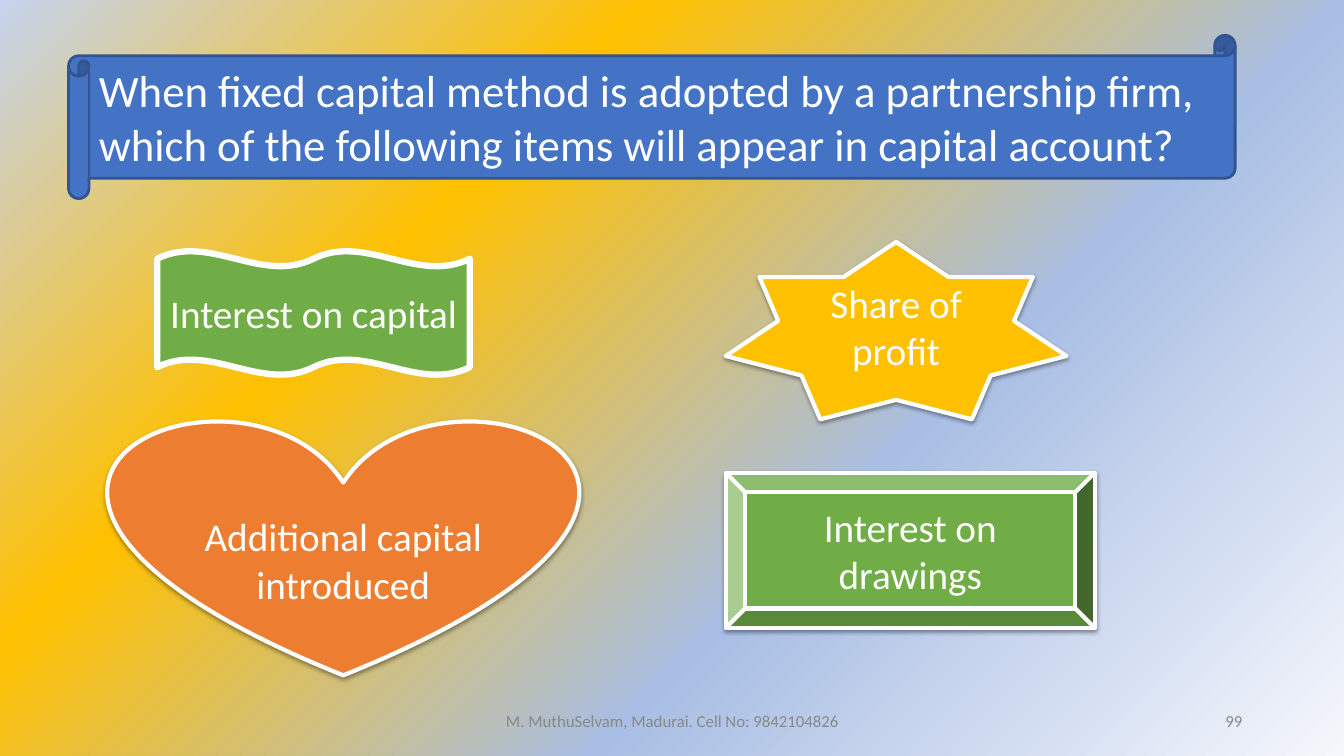
"""Build a quiz slide on the fixed capital method with four answer shapes."""
from lxml.etree import SubElement
from pptx import Presentation
from pptx.dml.color import RGBColor
from pptx.enum.shapes import MSO_SHAPE
from pptx.enum.text import MSO_ANCHOR, PP_ALIGN
from pptx.oxml.ns import qn
from pptx.util import Inches, Pt

WHITE = RGBColor(0xFF, 0xFF, 0xFF)
BLUE = RGBColor(0x44, 0x72, 0xC4)
NAVY = RGBColor(0x32, 0x54, 0x91)
GREEN = RGBColor(0x70, 0xAD, 0x47)
ORANGE = RGBColor(0xED, 0x7D, 0x31)
GOLD = RGBColor(0xFF, 0xC0, 0x00)
GREY = RGBColor(0x88, 0x88, 0x88)
PALE_BLUE = RGBColor(0xC5, 0xD3, 0xED)
SOFT_BLUE = RGBColor(0xA9, 0xBE, 0xE4)
NEAR_WHITE = RGBColor(0xF5, 0xF7, 0xFC)
BLACK = RGBColor(0, 0, 0)

SLIDE_WIDTH, SLIDE_HEIGHT = Inches(13.33), Inches(7.5)
BACKDROP = [(0, PALE_BLUE), (31, GOLD), (64, SOFT_BLUE), (100, NEAR_WHITE)]
RIGHT_COLUMN, FOOTER_ROW, FOOTER_HEIGHT = 54, 92.67, 5.33

QUESTION = {
    "text": "When fixed capital method is adopted by a partnership firm, "
            "which of the following items will appear in capital account?",
    "preset": MSO_SHAPE.HORIZONTAL_SCROLL, "share": (5.1, 4.67, 86.8, 21.6),
    "fill": BLUE, "edge": NAVY, "weight": 2, "size": 32, "align": PP_ALIGN.LEFT,
}
ANSWERS = [
    {"text": "Additional capital introduced", "preset": MSO_SHAPE.HEART,
     "share": (8.1, 55.33, 34.88, 34), "fill": ORANGE, "raised": True, "top": 0.52},
    {"text": "Share of profit", "preset": MSO_SHAPE.STAR_7_POINT,
     "share": (RIGHT_COLUMN, 32, 25.36, 23.47), "fill": GOLD, "raised": True},
    {"text": "Interest on drawings", "preset": MSO_SHAPE.BEVEL,
     "share": (RIGHT_COLUMN, 62.53, 27.46, 20.53), "fill": GREEN, "raised": True},
    {"text": "Interest on capital", "preset": MSO_SHAPE.DOUBLE_WAVE,
     "share": (11.7, 33.2, 23.26, 16.4), "fill": GREEN, "weight": 4.5},
]
FOOTERS = [
    ("M. MuthuSelvam, Madurai. Cell No: 9842104826", 33.16, 33.76, PP_ALIGN.CENTER),
    ("99", 70.67, 22.5, PP_ALIGN.RIGHT),
]


def place(share):
    """Turn percentages of the slide into lengths."""
    sides = (SLIDE_WIDTH, SLIDE_HEIGHT) * 2
    return [round(side * part / 100) for side, part in zip(sides, share)]


def write(frame, text, size, color, align, top=0.05):
    """Fill a text frame with one formatted paragraph."""
    layout = {"word_wrap": True, "vertical_anchor": MSO_ANCHOR.MIDDLE,
              "margin_top": Inches(top)}
    for name, value in layout.items():
        setattr(frame, name, value)
    paragraph = frame.paragraphs[0]
    paragraph.alignment = align
    run = paragraph.add_run()
    run.text = text
    for name, value in {"name": "Calibri", "size": Pt(size)}.items():
        setattr(run.font, name, value)
    run.font.color.rgb = color


def add_color(parent, color, alpha=100):
    """Append a colour element with its opacity in percent."""
    tint = SubElement(parent, qn("a:srgbClr"), val=str(color))
    if alpha < 100:
        SubElement(tint, qn("a:alpha"), val=str(alpha * 1000))


def add_panel(slide, item):
    """Draw a preset shape with its text."""
    panel = slide.shapes.add_shape(item["preset"], *place(item["share"]))
    panel.shadow.inherit = False
    panel.fill.solid()
    panel.fill.fore_color.rgb = item["fill"]
    panel.line.color.rgb = item.get("edge", WHITE)
    panel.line.width = Pt(item.get("weight", 3))
    if item.get("raised"):
        effects = panel._element.spPr.find(qn("a:effectLst"))
        shadow = SubElement(effects, qn("a:outerShdw"), blurRad=str(Pt(3.1)),
                            dist=str(Pt(1.6)), dir="5400000", rotWithShape="0")
        add_color(shadow, BLACK, 38)
    write(panel.text_frame, item["text"], item.get("size", 28), WHITE,
          item.get("align", PP_ALIGN.CENTER), item.get("top", 0.05))


def paint_backdrop(slide):
    """Give the slide a diagonal gradient."""
    fill = slide.background.fill
    fill.gradient()
    fill.gradient_angle = 315
    stops = next(slide._element.iter(qn("a:gsLst")))
    for stop in list(stops):
        stops.remove(stop)
    for position, color in BACKDROP:
        add_color(SubElement(stops, qn("a:gs"), pos=str(position * 1000)), color)


def main():
    """Assemble and save the slide."""
    deck = Presentation()
    deck.slide_width, deck.slide_height = SLIDE_WIDTH, SLIDE_HEIGHT
    slide = deck.slides.add_slide(deck.slide_layouts[6])
    paint_backdrop(slide)
    for item in [*ANSWERS, QUESTION]:
        add_panel(slide, item)
    for text, left, width, align in FOOTERS:
        box = slide.shapes.add_textbox(*place((left, FOOTER_ROW, width, FOOTER_HEIGHT)))
        write(box.text_frame, text, 12, GREY, align)
    deck.save("out.pptx")


if __name__ == "__main__":
    main()
